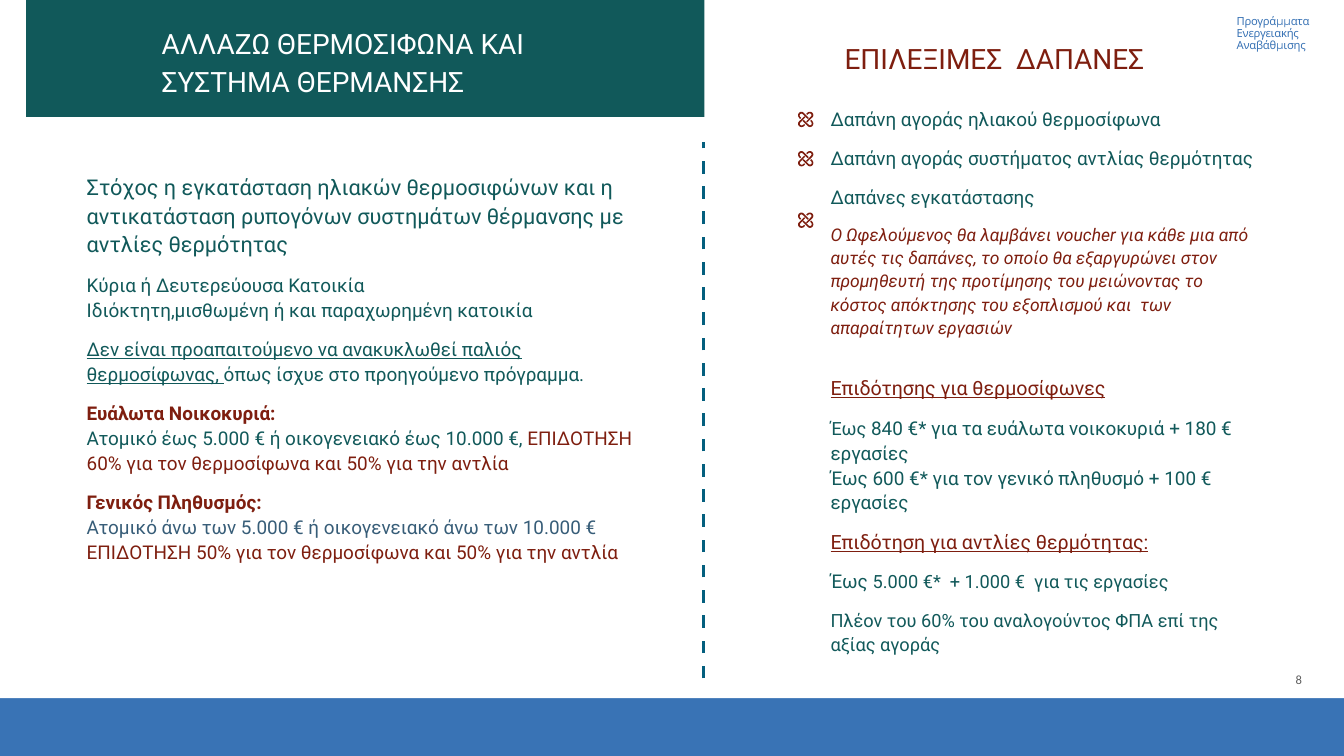
from lxml.etree import SubElement
from pptx import Presentation
from pptx.dml.color import RGBColor
from pptx.enum.shapes import MSO_CONNECTOR, MSO_SHAPE
from pptx.enum.text import PP_ALIGN
from pptx.oxml.ns import qn
from pptx.util import Cm, Pt

COLORS = {
    "white": "FFFFFF", "band": "3973B5", "teal": "11595A", "red": "7E1E0F",
    "slate": "375D78", "divider": "045F7E", "gray": "5E5E5E",
}


def rgb(name):
    return RGBColor.from_string(COLORS[name])


def add_text(box, paragraphs, font="Roboto", inset=0.15, line=1.1, gap=20, spc=None):
    """Each paragraph is a list of runs: (text, size, colour, style letters b, i, u).

    A newline in a run's text is a line break; gap is one space before or a list.
    """
    s = slide.shapes.add_textbox(*[Cm(v) for v in box])
    tf = s.text_frame
    tf.word_wrap = True
    tf.margin_left = tf.margin_right = tf.margin_top = tf.margin_bottom = Cm(inset)
    for i, runs in enumerate(paragraphs):
        p = tf.add_paragraph() if i else tf.paragraphs[0]
        p.alignment = PP_ALIGN.LEFT
        p.line_spacing = line
        p.space_before = Pt(0 if i == 0 else gap[i] if isinstance(gap, list) else gap)
        for text, size, color, style in runs:
            for n, part in enumerate(text.split("\n")):
                if n:
                    p.add_line_break()
                if not part:
                    continue
                r = p.add_run()
                r.text = part
                r.font.name = font
                r.font.size = Pt(size)
                r.font.color.rgb = rgb(color)
                r.font.bold = "b" in style
                r.font.italic = "i" in style
                r.font.underline = "u" in style
                if spc is not None:
                    r.font._element.set("spc", str(spc))


prs = Presentation()
prs.slide_width, prs.slide_height = Cm(67.74), Cm(38.1)
slide = prs.slides.add_slide(prs.slide_layouts[6])
slide.background.fill.solid()
slide.background.fill.fore_color.rgb = rgb("band")

# Page panel and title banner
for color, box in (("white", (0, 0, 67.74, 35.18)), ("teal", (1.32, 0, 34.19, 5.89))):
    s = slide.shapes.add_shape(MSO_SHAPE.RECTANGLE, *[Cm(v) for v in box])
    s.shadow.inherit = False
    s.fill.solid()
    s.fill.fore_color.rgb = rgb(color)
    s.line.fill.background()

add_text((8.15, 1.12, 21.36, 3.63),
         [[("ΑΛΛΑΖΩ ΘΕΡΜΟΣΙΦΩΝΑ ΚΑΙ ΣΥΣΤΗΜΑ ΘΕΡΜΑΝΣΗΣ", 40, "white", "")]],
         inset=0, line=1.13)

# Eligible costs and subsidies
add_text((41.71, 5.16, 21.97, 32.79), [
    [("Δαπάνη αγοράς ηλιακού θερμοσίφωνα", 27, "teal", "")],
    [("Δαπάνη αγοράς συστήματος αντλίας θερμότητας", 27, "teal", "")],
    [("Δαπάνες εγκατάστασης", 27, "teal", "")],
    [("Ο Ωφελούμενος θα λαμβάνει voucher για κάθε μια από αυτές τις δαπάνες, "
      "το οποίο θα εξαργυρώνει στον προμηθευτή της προτίμησης του μειώνοντας "
      "το κόστος απόκτησης του εξοπλισμού και  των απαραίτητων εργασιών",
      25, "red", "i")],
    [("Επιδότησης για θερμοσίφωνες", 28, "red", "u")],
    [("Έως ", 26, "teal", ""),
     ("840 €* για τα ευάλωτα νοικοκυριά + 180 € εργασίες\n"
      "Έως 600 €* για τον γενικό πληθυσμό + 100 € εργασίες", 27, "teal", "")],
    [("Επιδότηση για αντλίες θερμότητας:", 28, "red", "u")],
    [("Έως ", 27, "teal", ""),
     ("5.000 €*  + 1.000 €  για τις εργασίες", 26, "teal", "")],
    [("Πλέον του 60% του αναλογούντος ΦΠΑ επί της αξίας αγοράς", 26, "teal", "")],
], gap=[0, 20, 20, 20, 52, 20, 20, 20, 20])

add_text((65.3, 33.86, 1.65, 0.69), [[("8", 18, "gray", "")]],
         font="Calibri", inset=0, line=1.0, spc=390)

# Goal and income groups
add_text((4.22, 8.48, 28.37, 20.14), [
    [("Στόχος η εγκατάσταση ηλιακών θερμοσιφώνων και η αντικατάσταση ρυπογόνων "
      "συστημάτων θέρμανσης με αντλίες θερμότητας", 31, "teal", "")],
    [("Κύρια ή Δευτερεύουσα Κατοικία\n"
      "Ιδιόκτητη,μισθωμένη ή και παραχωρημένη κατοικία", 27, "teal", "")],
    [("Δεν είναι προαπαιτούμενο να ανακυκλωθεί παλιός θερμοσίφωνας, ", 27, "teal", "u"),
     ("όπως ίσχυε στο προηγούμενο πρόγραμμα.", 27, "teal", "")],
    [("Ευάλωτα Νοικοκυριά:\n", 27, "red", "b"),
     ("Ατομικό έως 5.000 € ή οικογενειακό έως 10.000 €, ", 27, "teal", ""),
     ("ΕΠΙΔΟΤΗΣΗ 60% για τον θερμοσίφωνα και 50% για την αντλία", 27, "red", "")],
    [("Γενικός Πληθυσμός:\n", 27, "red", "b"),
     ("Ατομικό άνω των 5.000 € ή οικογενειακό άνω των 10.000 € ", 27, "slate", ""),
     ("ΕΠΙΔΟΤΗΣΗ 50% για τον θερμοσίφωνα και 50% για την αντλία", 27, "red", "")],
])

add_text((62.33, 0.81, 4.83, 1.83),
         [[("Προγράμματα\nΕνεργειακής\nΑναβάθμισης", 16, "band", "")]],
         font="Montserrat", inset=0, line=0.9, spc=-30)
add_text((42.42, 1.96, 15.75, 1.96), [[("ΕΠΙΛΕΞΙΜΕΣ  ΔΑΠΑΝΕΣ", 40, "red", "")]], line=1.0)

# Dashed divider between the columns
divider = slide.shapes.add_connector(
    MSO_CONNECTOR.STRAIGHT, Cm(35.46), Cm(34.19), Cm(35.46), Cm(7.14))
divider.line.color.rgb = rgb("divider")
divider.line.width = Pt(3)
dash = SubElement(divider.line._get_or_add_ln(), qn("a:custDash"))
SubElement(dash, qn("a:ds"), d="600000", sp="600000")
SubElement(divider._element.spPr, qn("a:effectLst"))

# Knot bullets: one looped strand, turned four times about the centre (thousandths of an inch)
strand = [(-85, -152), (-110, -147), (-132, -132), (-147, -110), (-152, -83), (-147, -55),
          (-132, -32), (-110, -10), (-90, -30), (-112, -55), (-121, -80), (-112, -105),
          (-85, -119), (-60, -105), (40, -10), (60, -30), (-40, -132), (-60, -147)]
for y in (6.02, 8.0, 11.1):
    fb = None
    for turn in range(4):
        if fb is None:
            fb = slide.shapes.build_freeform(*strand[0], scale=Cm(2.54) / 1000)
        else:
            fb.move_to(*strand[0])
        fb.add_line_segments(strand[1:], close=True)
        strand = [(-v, u) for u, v in strand]
    knot = fb.convert_to_shape(Cm(40.61), Cm(y))
    knot.shadow.inherit = False
    knot.fill.solid()
    knot.fill.fore_color.rgb = rgb("red")
    knot.line.fill.background()

prs.save("out.pptx")
